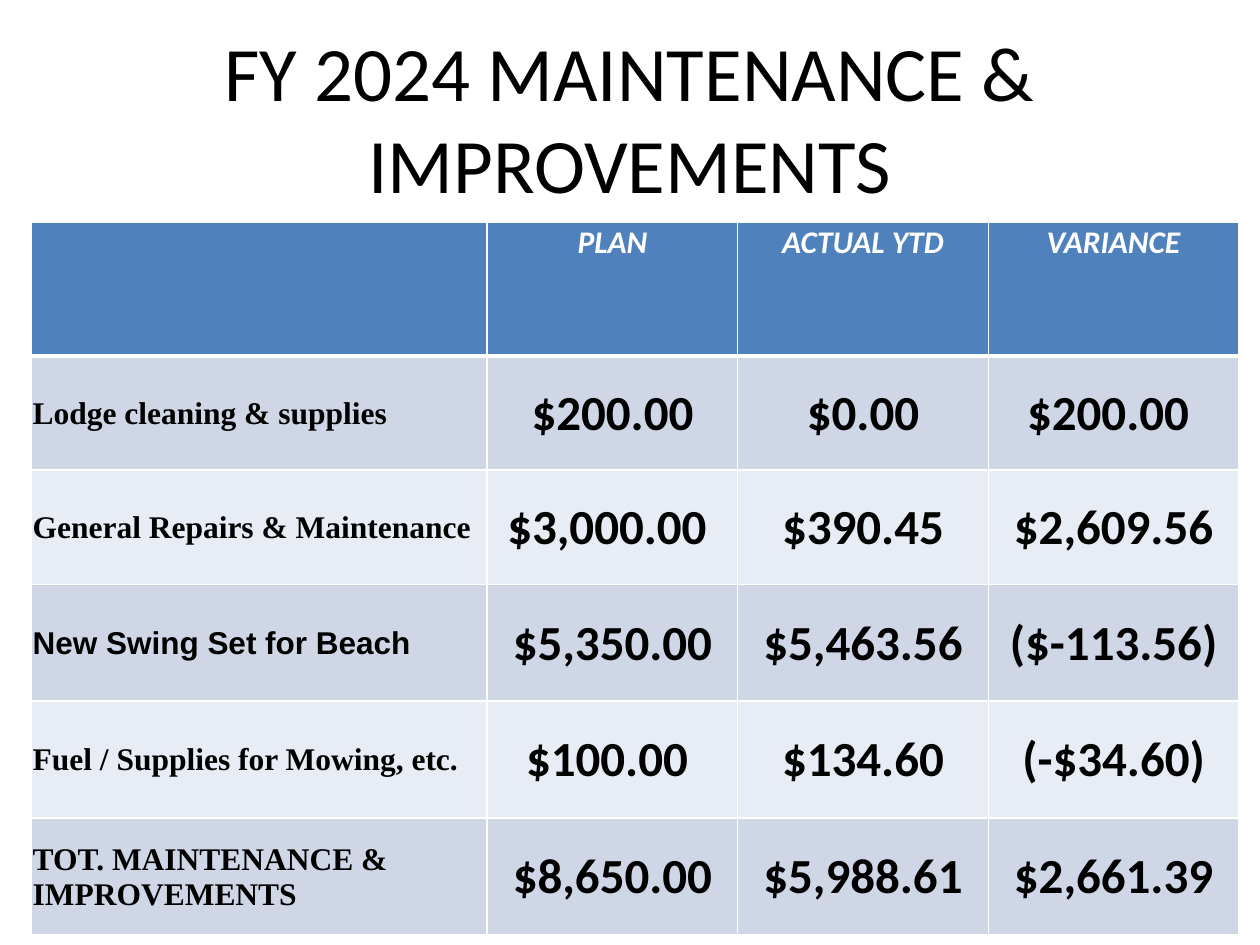
"""Build the FY 2024 maintenance and improvements budget slide."""
from lxml import etree
from pptx import Presentation
from pptx.dml.color import RGBColor
from pptx.enum import text
from pptx.oxml import ns
from pptx.util import Pt

BLACK = RGBColor(0, 0, 0)
WHITE = RGBColor(255, 255, 255)
BLUE = RGBColor(0x4F, 0x81, 0xBD)
BANDS = RGBColor(0xE8, 0xEC, 0xF4), RGBColor(0xCF, 0xD7, 0xE7)
SERIF = "Times New Roman"
MID = text.MSO_ANCHOR.MIDDLE
LEFT, MIDST = text.PP_ALIGN.LEFT, text.PP_ALIGN.CENTER

HEAD = dict(name="Calibri", size=Pt(18), bold=True, italic=True)
LABEL = dict(name=SERIF, size=Pt(18), bold=True)
MONEY = dict(name="Calibri", size=Pt(28), bold=True)
ROWS = [
    ("", "PLAN", "ACTUAL YTD", "VARIANCE"),
    ("Lodge cleaning & supplies", "$200.00", "$0.00", "$200.00 "),
    ("General Repairs & Maintenance", "$3,000.00 ", "$390.45", "$2,609.56"),
    ("New Swing Set for Beach", "$5,350.00", "$5,463.56", "($-113.56)"),
    ("Fuel / Supplies for Mowing, etc.", "$100.00 ", "$134.60", "(-$34.60)"),
    ("TOT. MAINTENANCE & IMPROVEMENTS", "$8,650.00", "$5,988.61", "$2,661.39"),
]
FONTS = {"New Swing Set for Beach": "Arial"}
WIDE = [260.4, 143.2, 143.2, 143.2]
HIGH = [76.7, 65.2, 65.2, 66.8, 66.8, 66.8]


def write(para, words, align, look, color):
    para.alignment = align
    run = para.add_run()
    run.text = words
    for key, val in look.items():
        setattr(run.font, key, val)
    run.font.color.rgb = color


def edge(cell, side, width):
    line = etree.SubElement(cell._tc.get_or_add_tcPr(), ns.qn("a:ln" + side), w=str(Pt(width)))
    fill = etree.SubElement(line, ns.qn("a:solidFill"))
    etree.SubElement(fill, ns.qn("a:srgbClr"), val=str(WHITE))


deck = Presentation()
deck.slide_width, deck.slide_height = Pt(720), Pt(540)
slide = deck.slides.add_slide(deck.slide_layouts[6])

title = slide.shapes.add_textbox(Pt(36), Pt(21.6), Pt(648), Pt(90)).text_frame
title.word_wrap = True
title.vertical_anchor = MID
write(title.paragraphs[0], "FY 2024 MAINTENANCE & IMPROVEMENTS", MIDST,
      dict(name="Calibri", size=Pt(44)), BLACK)

table = slide.shapes.add_table(len(ROWS), len(WIDE), Pt(18), Pt(126.8),
                               Pt(sum(WIDE)), Pt(sum(HIGH))).table
for col, width in zip(table.columns, WIDE):
    col.width = Pt(width)
for row, height in zip(table.rows, HIGH):
    row.height = Pt(height)

for r, row in enumerate(ROWS):
    for c, words in enumerate(row):
        cell = table.cell(r, c)
        cell.margin_left = cell.margin_right = cell.margin_top = Pt(0.7)
        cell.margin_bottom = Pt(0)
        for side in "LRTB":
            thick = (r == 0 and side == "B") or (r == 1 and side == "T")
            edge(cell, side, 3 if thick else 1)
        cell.fill.solid()
        cell.fill.fore_color.rgb = BANDS[r % 2] if r else BLUE
        if r:
            cell.vertical_anchor = MID
        if words:
            look = HEAD if r == 0 else MONEY if c else LABEL
            look = look | {"name": FONTS.get(words, look["name"])}
            write(cell.text_frame.paragraphs[0], words, MIDST if c else LEFT,
                  look, BLACK if r else WHITE)

deck.save("out.pptx")
